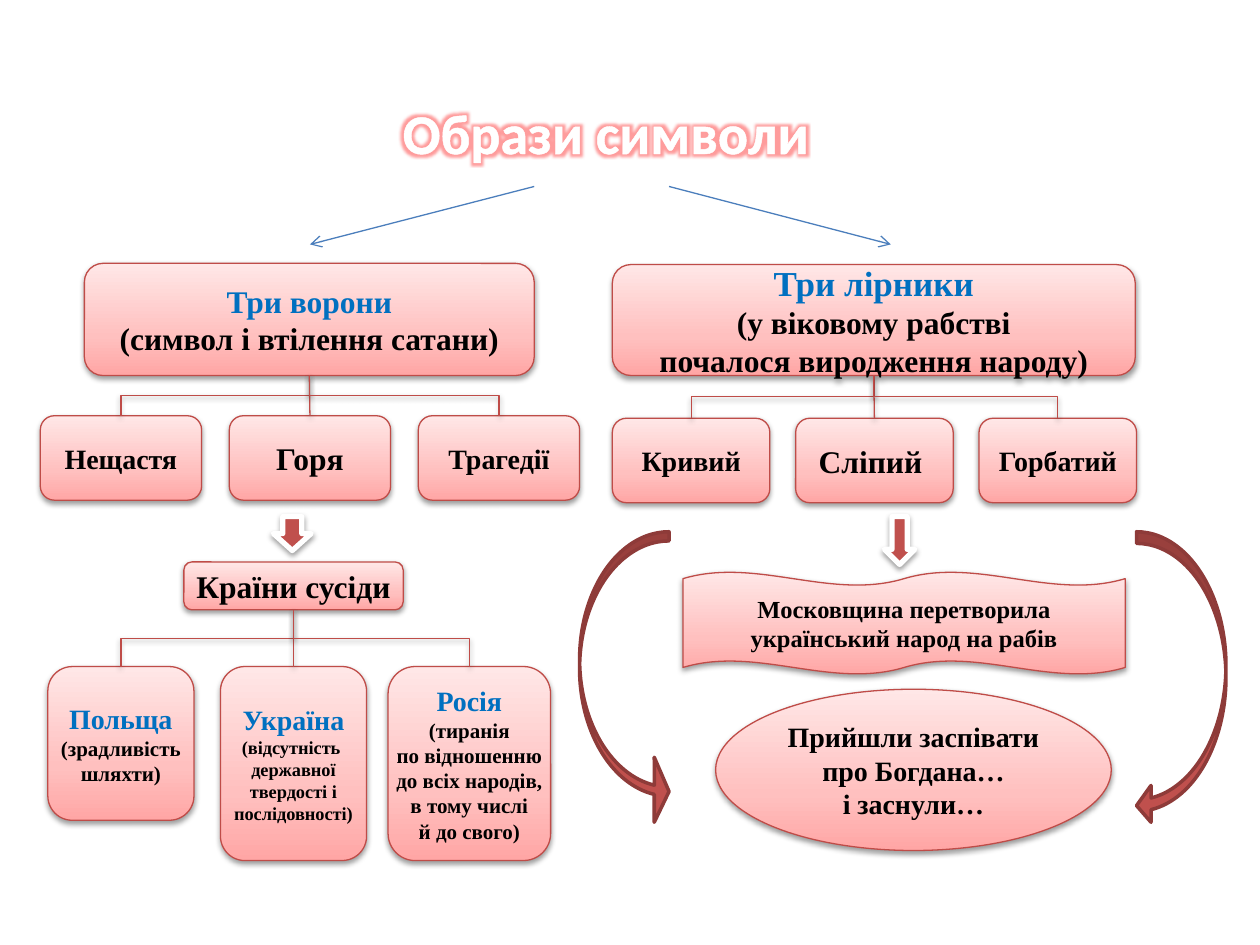
from pptx import Presentation
from pptx.dml.color import RGBColor
from pptx.enum.shapes import MSO_CONNECTOR, MSO_SHAPE
from pptx.enum.text import MSO_ANCHOR, PP_ALIGN
from pptx.oxml import parse_xml
from pptx.oxml.ns import nsdecls
from pptx.util import Inches, Pt

COLORS = {
    "blue": "0070C0", "black": "000000", "white": "FFFFFF", "arrow": "4B7EBC",
    "border": "BF4C48", "red": "C0504D", "dark_red": "8E3B39", "glow": "FF5A5A",
    "low": "FFA6A5", "middle": "FFC0BF", "high": "FFE7E7",
}
RGB = {name: RGBColor.from_string(value) for name, value in COLORS.items()}
NS = nsdecls("a")
GRADIENT = f"""<a:gradFill {NS} rotWithShape="1"><a:gsLst>
<a:gs pos="0"><a:srgbClr val="{COLORS['low']}"/></a:gs>
<a:gs pos="35000"><a:srgbClr val="{COLORS['middle']}"/></a:gs>
<a:gs pos="100000"><a:srgbClr val="{COLORS['high']}"/></a:gs>
</a:gsLst><a:lin ang="16200000" scaled="1"/></a:gradFill>"""
SHADOW = f"""<a:effectLst {NS}><a:outerShdw blurRad="40000" dist="20000" dir="5400000"
rotWithShape="0"><a:srgbClr val="{COLORS['black']}"><a:alpha val="38000"/></a:srgbClr>
</a:outerShdw></a:effectLst>"""
GLOW = f"""<a:effectLst {NS}><a:glow rad="101600"><a:srgbClr val="{COLORS['glow']}">
<a:alpha val="60000"/></a:srgbClr></a:glow></a:effectLst>"""

prs = Presentation()
prs.slide_width, prs.slide_height = Inches(10), Inches(7.5)
slide = prs.slides.add_slide(prs.slide_layouts[6])
shapes = slide.shapes


def add_box(kind, box, lines, margin=0, wrap=False):
    """Add a pink gradient shape; each line is (text, size, colour)."""
    s = shapes.add_shape(kind, *(Inches(v) for v in box))
    s.line.color.rgb = RGB["border"]
    s.line.width = Pt(0.75)
    ln = s.line._ln
    ln.addprevious(parse_xml(GRADIENT))
    ln.addnext(parse_xml(SHADOW))
    tf = s.text_frame
    tf.word_wrap = wrap
    tf.vertical_anchor = MSO_ANCHOR.MIDDLE
    tf.margin_left = tf.margin_right = Inches(margin)
    tf.margin_top = tf.margin_bottom = Inches(margin / 2)
    for i, (text, size, color) in enumerate(lines):
        p = tf.add_paragraph() if i else tf.paragraphs[0]
        p.alignment = PP_ALIGN.CENTER
        r = p.add_run()
        r.text = text
        r.font.name = "Times New Roman"
        r.font.size = Pt(size)
        r.font.bold = True
        r.font.color.rgb = RGB[color]
    return s


def join(child, parent):
    """Join the top of a child box to the bottom of its parent box."""
    x1, y1 = child.left + child.width // 2, child.top
    x2, y2 = parent.left + parent.width // 2, parent.top + parent.height
    straight = abs(x1 - x2) < Inches(0.1)
    kind = MSO_CONNECTOR.STRAIGHT if straight else MSO_CONNECTOR.ELBOW
    c = shapes.add_connector(kind, x1, y1, x2, y2)
    c.begin_connect(child, 0)
    c.end_connect(parent, 2)
    if not straight:
        # A vertical-first elbow is a horizontal-first one turned by 90 degrees
        c.width, c.height = y1 - y2, abs(x1 - x2)
        c.left = (x1 + x2 - c.width) // 2
        c.top = (y1 + y2 - c.height) // 2
        xfrm = c._element.spPr.xfrm
        right = x1 > x2
        xfrm.set("rot", "16200000" if right else "5400000")
        xfrm.set("flipH", "0" if right else "1")
        xfrm.set("flipV", "1")
    c.line.color.rgb = RGB["border"]
    c.line.width = Pt(0.75)
    c._element.spPr.append(parse_xml(SHADOW))


# Title
s = shapes.add_textbox(Inches(0.31), Inches(0.61), Inches(9), Inches(0.87))
tf = s.text_frame
tf.word_wrap = True
tf.vertical_anchor = MSO_ANCHOR.MIDDLE
p = tf.paragraphs[0]
p.alignment = PP_ALIGN.CENTER
r = p.add_run()
r.text = "Образи символи"
r.font.name = "Calibri"
r.font.size = Pt(32)
r.font.bold = True
r.font.color.rgb = RGB["white"]
fill = r.font._element.solidFill
fill.addprevious(parse_xml(
    f'<a:ln {NS} w="18415"><a:solidFill><a:srgbClr val="{COLORS["white"]}"/></a:solidFill></a:ln>'))
fill.addnext(parse_xml(GLOW))

# Arrows from the title to the two trees
for x1, x2 in [(4.24, 2.46), (5.31, 7.07)]:
    c = shapes.add_connector(MSO_CONNECTOR.STRAIGHT, Inches(x1), Inches(1.48), Inches(x2), Inches(1.94))
    c.line.color.rgb = RGB["arrow"]
    c.line.width = Pt(0.75)
    c.line._ln.append(parse_xml(f'<a:tailEnd {NS} type="arrow"/>'))
    c._element.spPr.append(parse_xml(f"<a:effectLst {NS}/>"))

# Trees: a parent box and its three children
trees = [
    ((0.67, 2.09, 3.57, 0.89),
     [("Три ворони", 18, "blue"), ("(символ і втілення сатани)", 18, "black")],
     [((0.32 + 1.5 * i, 3.3, 1.28, 0.67), [(text, size, "black")])
      for i, (text, size) in enumerate([("Нещастя", 16), ("Горя", 18), ("Трагедії", 16)])]),
    ((1.46, 4.46, 1.74, 0.38),
     [("Країни сусіди", 18, "black")],
     [((x, 5.29, w, h), [(name, 16, "blue")] + [(line, size, "black") for line in lines])
      for x, w, h, name, size, lines in [
          (0.38, 1.16, 1.22, "Польща", 12, ["(зрадливість", "шляхти)"]),
          (1.75, 1.16, 1.54, "Україна", 10.5,
           ["(відсутність ", "державної", "твердості і", "послідовності)"]),
          (3.08, 1.29, 1.54, "Росія", 12,
           ["(тиранія", "по відношенню", "до всіх народів,", "в тому числі", "й до свого)"])]]),
    ((4.86, 2.1, 4.15, 0.88),
     [("Три лірники", 20, "blue"), ("(у віковому рабстві", 18, "black"),
      ("почалося виродження народу)", 18, "black")],
     [((4.86 + 1.455 * i, 3.32, 1.25, 0.67), [(text, size, "black")])
      for i, (text, size) in enumerate([("Кривий", 16), ("Сліпий ", 18), ("Горбатий", 16)])]),
]
for box, lines, children in trees:
    parent = add_box(MSO_SHAPE.ROUNDED_RECTANGLE, box, lines)
    for child_box, child_lines in children:
        join(add_box(MSO_SHAPE.ROUNDED_RECTANGLE, child_box, child_lines), parent)

# Conclusions
wave = add_box(MSO_SHAPE.DOUBLE_WAVE, (5.42, 4.54, 3.51, 0.81),
               [("Московщина перетворила", 14, "black"),
                ("український народ на рабів", 14, "black")], margin=0.1)
wave.adjustments[0] = 0.065
add_box(MSO_SHAPE.OVAL, (5.68, 5.47, 3.14, 1.28),
        [(text, 16, "black") for text in ("Прийшли заспівати", "про Богдана…", "і заснули…")],
        margin=0.1, wrap=True)

# Block arrows
block_arrows = [
    (MSO_SHAPE.CURVED_RIGHT_ARROW, (4.6, 4.22, 0.71, 2.32), (0.103, 0.727, 0.165), "dark_red", 2),
    (MSO_SHAPE.CURVED_LEFT_ARROW, (9.02, 4.22, 0.71, 2.32), (0.131, 0.412, 0.162), "dark_red", 2),
    (MSO_SHAPE.DOWN_ARROW, (7.02, 4.1, 0.24, 0.38), (), "white", 3),
    (MSO_SHAPE.DOWN_ARROW, (2.17, 4.1, 0.3, 0.27), (), "white", 3),
]
for kind, box, adjustments, outline, width in block_arrows:
    s = shapes.add_shape(kind, *(Inches(v) for v in box))
    for i, value in enumerate(adjustments):
        s.adjustments[i] = value
    s.fill.solid()
    s.fill.fore_color.rgb = RGB["red"]
    s.line.color.rgb = RGB[outline]
    s.line.width = Pt(width)
    if kind == MSO_SHAPE.DOWN_ARROW:
        s.line._ln.addnext(parse_xml(SHADOW))
    else:
        s.shadow.inherit = False

prs.save("out.pptx")
